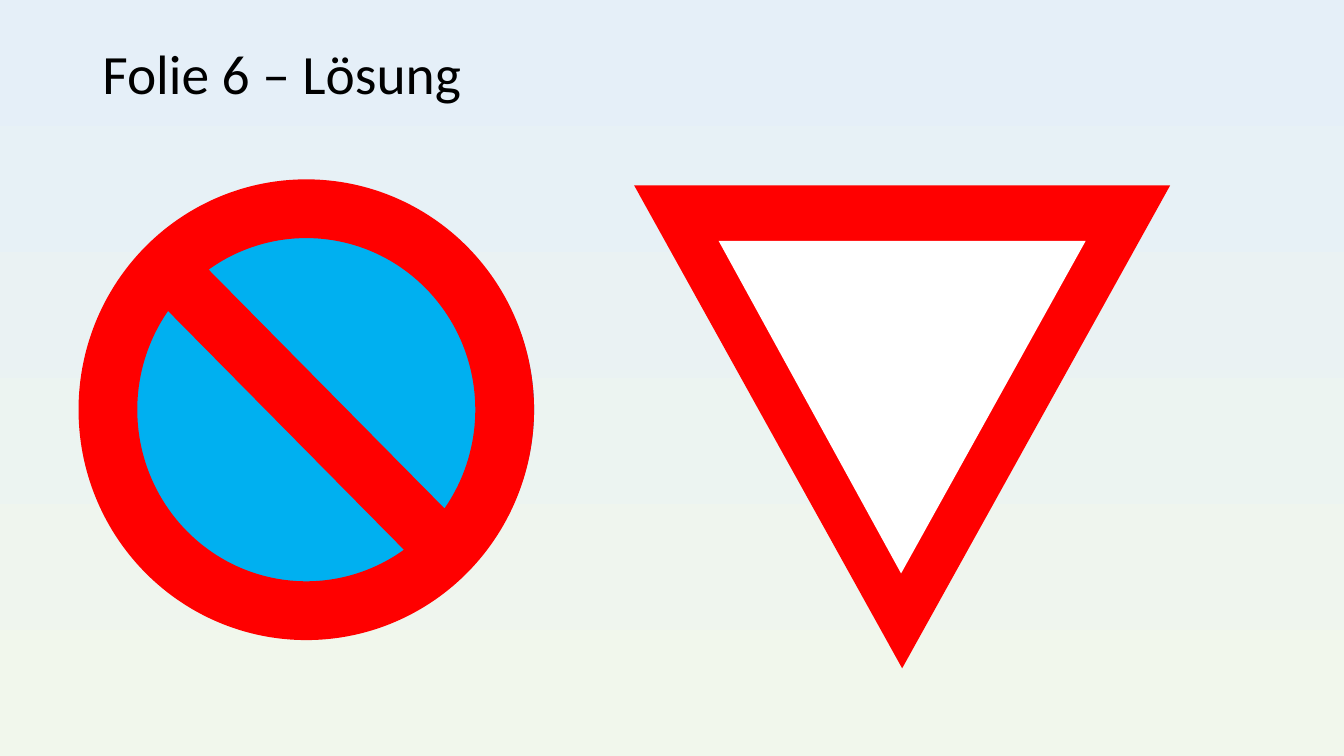
from dataclasses import dataclass
from pptx import Presentation
from pptx.dml.color import RGBColor
from pptx.enum.shapes import MSO_SHAPE
from pptx.enum.text import MSO_ANCHOR
from pptx.shapes.group import GroupShape
from pptx.slide import Slide
from pptx.util import Cm, Pt

COLORS = {
    "sky": "E5EFF8",
    "meadow": "F1F7EC",
    "red": "FF0000",
    "blue": "00B0F0",
    "white": "FFFFFF",
    "black": "000000",
}


@dataclass
class Part:
    kind: MSO_SHAPE
    left: float
    top: float
    width: float
    height: float
    color: str
    turn: int = 0
    adjust: float | None = None


PARKING = [
    Part(MSO_SHAPE.OVAL, 2.16, 4.67, 11.3, 11.3, "blue"),
    Part(MSO_SHAPE.NO_SYMBOL, 1.98, 4.52, 11.48, 11.61, "red", adjust=0.129),
]
YIELD = [
    Part(MSO_SHAPE.ISOSCELES_TRIANGLE, 15.98, 4.67, 13.51, 12.17, "red", 180),
    Part(MSO_SHAPE.ISOSCELES_TRIANGLE, 18.11, 6.07, 9.25, 8.38, "white", 180, 0.503),
]


def tint(name: str) -> RGBColor:
    return RGBColor.from_string(COLORS[name])


def paint(slide: Slide) -> None:
    fill = slide.background.fill
    fill.gradient()
    fill.gradient_angle = 270
    for stop, name in zip(fill.gradient_stops, ("sky", "meadow")):
        stop.color.rgb = tint(name)


def title(slide: Slide, text: str) -> None:
    box = slide.shapes.add_textbox(Cm(2.33), Cm(1.02), Cm(29.21), Cm(1.83))
    frame = box.text_frame
    frame.word_wrap = True
    frame.vertical_anchor = MSO_ANCHOR.MIDDLE
    line = frame.paragraphs[0]
    line.line_spacing = 0.9
    run = line.add_run()
    run.text = text
    for key, value in {"name": "Calibri", "size": Pt(39.6)}.items():
        setattr(run.font, key, value)
    run.font.color.rgb = tint("black")


def draw(group: GroupShape, part: Part) -> None:
    shape = group.shapes.add_shape(
        part.kind, Cm(part.left), Cm(part.top), Cm(part.width), Cm(part.height)
    )
    shape.shadow.inherit = False
    shape.fill.solid()
    shape.fill.fore_color.rgb = tint(part.color)
    shape.line.fill.background()
    shape.rotation = part.turn
    if part.adjust is not None:
        shape.adjustments[0] = part.adjust


def main() -> None:
    deck = Presentation()
    deck.slide_width, deck.slide_height = Cm(33.87), Cm(19.05)
    slide = deck.slides.add_slide(deck.slide_layouts[6])
    paint(slide)
    title(slide, "Folie 6 – Lösung")
    for sign in (PARKING, YIELD):
        group = slide.shapes.add_group_shape()
        for part in sign:
            draw(group, part)
    deck.save("out.pptx")


if __name__ == "__main__":
    main()
